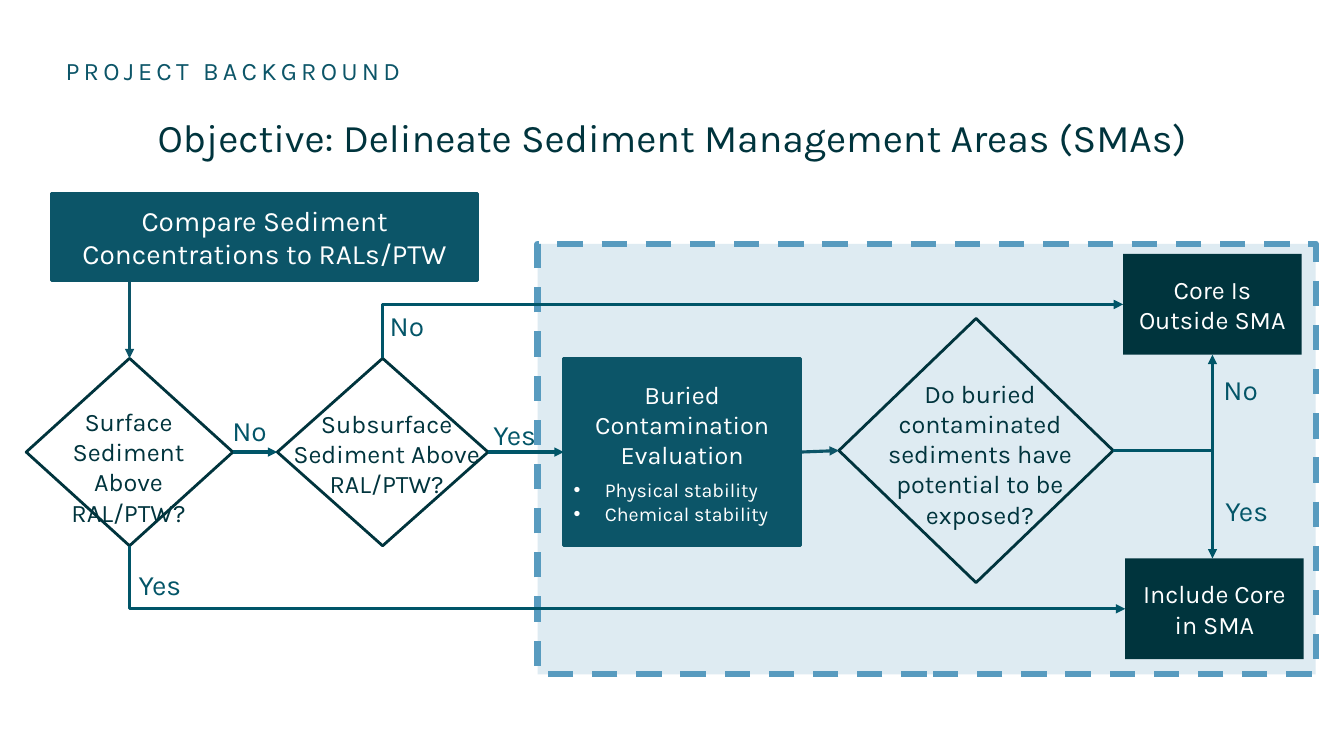
from lxml.etree import SubElement
from pptx import Presentation
from pptx.dml.color import RGBColor
from pptx.enum.dml import MSO_LINE
from pptx.enum.shapes import MSO_CONNECTOR, MSO_SHAPE
from pptx.enum.text import MSO_ANCHOR, MSO_AUTO_SIZE, PP_ALIGN
from pptx.oxml.ns import qn
from pptx.util import Inches, Pt

WIDE, HIGH = Inches(13.33), Inches(7.5)
COLS, ROWS = 100, 75
FONT = "Karla"
WHITE = RGBColor(0xFF, 0xFF, 0xFF)
TEAL = RGBColor(0x0C, 0x55, 0x68)
DARK = RGBColor(0x00, 0x34, 0x3D)
LINK = RGBColor(0x00, 0x55, 0x68)
LABEL = RGBColor(0x03, 0x55, 0x68)
PALE = RGBColor(0xDE, 0xEB, 0xF2)
BLUE = RGBColor(0x58, 0x9B, 0xBF)
TOP, LEFT, BOTTOM, RIGHT = range(4)


def place(box, col, row, cols, rows):
    """Turn a cell span inside a box into left, top, width and height."""
    return (round((box[0] + col) * WIDE / COLS), round((box[1] + row) * HIGH / ROWS),
            round(cols * WIDE / COLS), round(rows * HIGH / ROWS))


def style(item, values):
    for name, value in values.items():
        setattr(item, name, value)


def write(frame, lines, size, color, align=PP_ALIGN.CENTER, anchor=MSO_ANCHOR.TOP, inset=None):
    style(frame, {"word_wrap": True, "auto_size": MSO_AUTO_SIZE.NONE,
                  "vertical_anchor": anchor})
    if inset is not None:
        sides = ("left", "top", "right", "bottom")
        style(frame, {f"margin_{side}": inset for side in sides})
    for i, line in enumerate(lines):
        para = frame.paragraphs[0] if i == 0 else frame.add_paragraph()
        para.text = line
        para.alignment = align
        paint(para, size, color)


def paint(para, size, color):
    for run in para.runs:
        style(run.font, {"name": FONT, "size": Pt(size)})
        run.font.color.rgb = color


def text(slide, spot, lines, size, color, **more):
    area = slide.shapes.add_textbox(*spot)
    write(area.text_frame, lines, size, color, **more)
    return area


def shape(slide, kind, spot, fill=None, line=None, weight=2):
    item = slide.shapes.add_shape(kind, *spot)
    item.shadow.inherit = False
    if fill is None:
        item.fill.background()
    else:
        item.fill.solid()
        item.fill.fore_color.rgb = fill
    if line is None:
        item.line.fill.background()
    else:
        item.line.color.rgb = line
        item.line.width = Pt(weight)
    return item


def block(slide, spot, words, fill, size=18, line=None):
    item = shape(slide, MSO_SHAPE.RECTANGLE, spot, fill, line)
    write(item.text_frame, [words], size, WHITE, anchor=MSO_ANCHOR.MIDDLE)
    return item


def choice(slide, spot, note, lines):
    """Draw a decision diamond with its question laid over it."""
    item = shape(slide, MSO_SHAPE.FLOWCHART_DECISION, spot, line=DARK)
    text(slide, note, lines, 18, DARK)
    return item


def tag(slide, box, col, row, word):
    text(slide, place(box, col, row, 4.73, 3.4), [word], 20, LABEL, inset=0)


def side(item, site):
    """Give the middle point of one side of a shape."""
    x, y = item.left + item.width // 2, item.top + item.height // 2
    return {TOP: (x, item.top), LEFT: (item.left, y),
            BOTTOM: (x, item.top + item.height), RIGHT: (item.left + item.width, y)}[site]


def arrow(slide, start, end, color=LINK, kind=MSO_CONNECTOR.STRAIGHT):
    link = slide.shapes.add_connector(kind, *start, *end)
    link.line.color.rgb = color
    link.line.width = Pt(2.25)
    SubElement(link.line._get_or_add_ln(), qn("a:tailEnd"), type="triangle")
    SubElement(link._element.spPr, qn("a:effectLst"))
    return link


def join(slide, start, end, color=LINK):
    link = arrow(slide, side(start, RIGHT), side(end, LEFT), color)
    link.begin_connect(start, RIGHT)
    link.end_connect(end, LEFT)


def elbow(slide, start, end, upright=False):
    """Draw a one-bend arrow; an upright one leaves its start vertically."""
    (x1, y1), (x2, y2) = start, end
    if upright:
        midx, midy = (x1 + x2) // 2, (y1 + y2) // 2
        halfx, halfy = abs(y2 - y1) // 2, abs(x2 - x1) // 2
        turn = 1 if y2 < y1 else -1
        start = (midx - turn * halfx, midy - halfy)
        end = (midx + turn * halfx, midy + halfy)
    link = arrow(slide, start, end, kind=MSO_CONNECTOR.ELBOW)
    props = link._element.spPr
    props.find(qn("a:prstGeom")).set("prst", "bentConnector2")
    if upright:
        props.find(qn("a:xfrm")).set("rot", str(270 * 60000))


def header(slide, box):
    area = text(slide, place(box, 4.88, 0, 48.76, 3), ["PROJECT BACKGROUND"], 18, TEAL,
                align=PP_ALIGN.LEFT, anchor=MSO_ANCHOR.MIDDLE, inset=0)
    area.text_frame.paragraphs[0].runs[0].font._element.set("spc", "300")
    title = slide.shapes.title
    spot = place(box, 0, 5.2, box[2], 5.7)
    style(title, dict(zip(("left", "top", "width", "height"), spot)))
    write(title.text_frame, ["Objective: Delineate Sediment Management Areas (SMAs)"], 28, DARK)


def screen(slide, box):
    """Place the concentration checks and return their two diamonds."""
    first = block(slide, place(box, 3.83, 0, 31.73, 8.6),
                  "Compare Sediment Concentrations to RALs/PTW", TEAL, 20, TEAL)
    surface = choice(slide, place(box, 1.95, 16.35, 15.38, 18.6),
                     place(box, 2.25, 20.6, 14.63, 13.1),
                     ["Surface\nSediment Above RAL/PTW?"])
    deep = choice(slide, place(box, 20.63, 16.35, 15.68, 18.6),
                  place(box, 20.63, 20.8, 16.28, 13.1),
                  ["Subsurface\nSediment Above", "RAL/PTW?"])
    for col, row, word in ((16.2, 21.8, "No"), (9.53, 37.1, "Yes"),
                           (27.91, 11.4, "No"), (35.93, 22.2, "Yes")):
        tag(slide, box, col, row, word)
    down = side(surface, TOP)
    link = arrow(slide, (down[0], side(first, BOTTOM)[1]), down, TEAL)
    link.end_connect(surface, TOP)
    join(slide, surface, deep)
    return surface, deep


def panel(slide, box):
    """Place the evaluation area and return its review and outcome blocks."""
    frame = shape(slide, MSO_SHAPE.RECTANGLE, place(box, 0, 0, *box[2:]), PALE, BLUE, 4.5)
    frame.line.dash_style = MSO_LINE.DASH
    review = block(slide, place(box, 1.94, 11.35, 17.63, 18.6),
                   "Buried Contamination Evaluation", TEAL, line=TEAL)
    review.text_frame.paragraphs[0].space_after = Pt(6)
    for words in ("Physical stability", "Chemical stability"):
        para = review.text_frame.add_paragraph()
        para.text = words
        para.alignment = PP_ALIGN.LEFT
        props = para._p.get_or_add_pPr()
        props.set("marL", str(Inches(0.31)))
        props.set("indent", str(-Inches(0.31)))
        SubElement(props, qn("a:buFont"), typeface="Arial")
        SubElement(props, qn("a:buChar"), char="•")
        paint(para, 14, WHITE)
    exposed = choice(slide, place(box, 22.42, 7.4, 20.41, 26.2),
                     place(box, 24.29, 12.8, 17.25, 16.2),
                     ["Do buried contaminated sediments have potential to be exposed?"])
    outside = block(slide, place(box, 43.57, 1, 13.28, 10), "Core Is Outside SMA", DARK)
    include = block(slide, place(box, 43.72, 31.2, 13.28, 10), "Include Core in SMA", DARK)
    tag(slide, box, 49.95, 12.8, "No")
    tag(slide, box, 50.4, 24.8, "Yes")
    join(slide, review, exposed, TEAL)
    fork, stem = side(exposed, RIGHT), side(outside, BOTTOM)
    elbow(slide, fork, stem)
    elbow(slide, fork, (stem[0], include.top))
    return review, outside, include


def main():
    deck = Presentation()
    style(deck, {"slide_width": WIDE, "slide_height": HIGH})
    slide = deck.slides.add_slide(deck.slide_layouts[5])
    header(slide, (0, 5.5, 100, 11))
    review, outside, include = panel(slide, (40, 24.2, 57.9, 42.7))
    surface, deep = screen(slide, (0, 19.2, 40, 42))
    join(slide, deep, review)
    elbow(slide, side(surface, BOTTOM), side(include, LEFT), upright=True)
    elbow(slide, side(deep, TOP), side(outside, LEFT), upright=True)
    deck.save("out.pptx")


if __name__ == "__main__":
    main()
